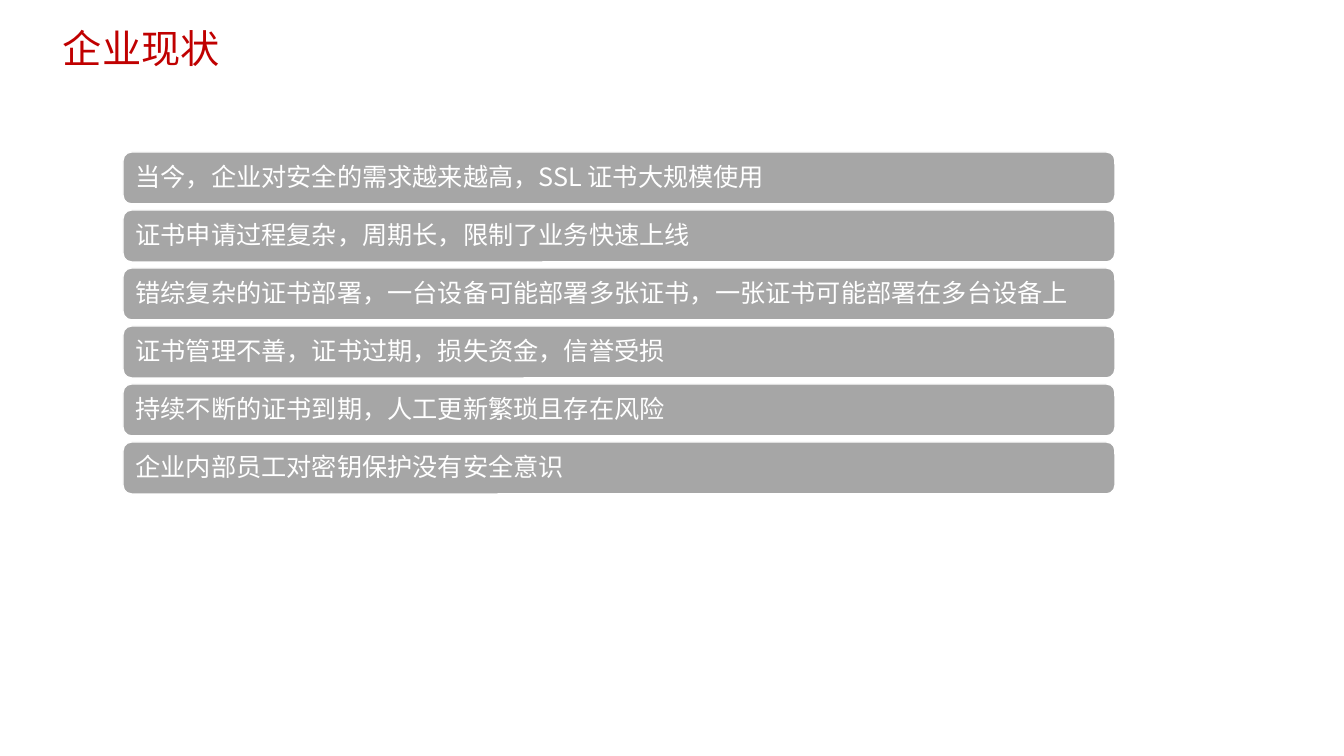
"""Build the slide on the current state of enterprise certificate management."""
from pptx import Presentation
from pptx.dml.color import RGBColor
from pptx.enum.shapes import MSO_SHAPE
from pptx.enum.text import MSO_ANCHOR, PP_ALIGN
from pptx.oxml.ns import qn
from pptx.util import Pt
from lxml.etree import SubElement

EMU_PER_PX = 914400 / 100.8
FONT_NAME = "Noto Sans CJK SC"
BAR_LEFT, BAR_TOP, BAR_WIDTH, BAR_HEIGHT, BAR_PITCH = 123, 152, 992, 52, 58
STATEMENTS = [
    "当今，企业对安全的需求越来越高，SSL 证书大规模使用",
    "证书申请过程复杂，周期长，限制了业务快速上线",
    "错综复杂的证书部署，一台设备可能部署多张证书，一张证书可能部署在多台设备上",
    "证书管理不善，证书过期，损失资金，信誉受损",
    "持续不断的证书到期，人工更新繁琐且存在风险",
    "企业内部员工对密钥保护没有安全意识",
]


def px(*lengths):
    return [round(length * EMU_PER_PX) for length in lengths]


def write_text(shape, text, size, color, frame_format):
    frame = shape.text_frame
    for name, value in frame_format.items():
        setattr(frame, name, value)
    paragraph = frame.paragraphs[0]
    paragraph.alignment = PP_ALIGN.LEFT
    run = paragraph.add_run()
    run.text = text
    for name, value in {"name": FONT_NAME, "size": Pt(size)}.items():
        setattr(run.font, name, value)
    run.font.color.rgb = RGBColor.from_string(color)
    SubElement(run.font._element, qn("a:ea"), typeface=FONT_NAME)
    return paragraph


presentation = Presentation()
presentation.slide_width, presentation.slide_height = px(1344, 756)
slide = presentation.slides.add_slide(presentation.slide_layouts[6])

title = slide.shapes.add_textbox(*px(53, 19, 633, 57))
write_text(title, "企业现状", 28, "C00000", {"word_wrap": True})

inset, = px(10)
bar_format = {
    "word_wrap": True,
    "vertical_anchor": MSO_ANCHOR.MIDDLE,
    "margin_left": inset,
    "margin_right": inset,
    "margin_top": inset,
    "margin_bottom": inset,
}
for index, statement in enumerate(STATEMENTS):
    bar_top = BAR_TOP + index * BAR_PITCH
    bar = slide.shapes.add_shape(
        MSO_SHAPE.ROUNDED_RECTANGLE, *px(BAR_LEFT, bar_top, BAR_WIDTH, BAR_HEIGHT)
    )
    bar.shadow.inherit = False
    bar.fill.solid()
    bar.fill.fore_color.rgb = RGBColor.from_string("A6A6A6")
    bar.line.color.rgb = RGBColor.from_string("FFFFFF")
    bar.line.width = Pt(1)
    paragraph = write_text(bar, statement, 18, "FFFFFF", bar_format)
    paragraph.line_spacing = 0.9

presentation.save("out.pptx")
